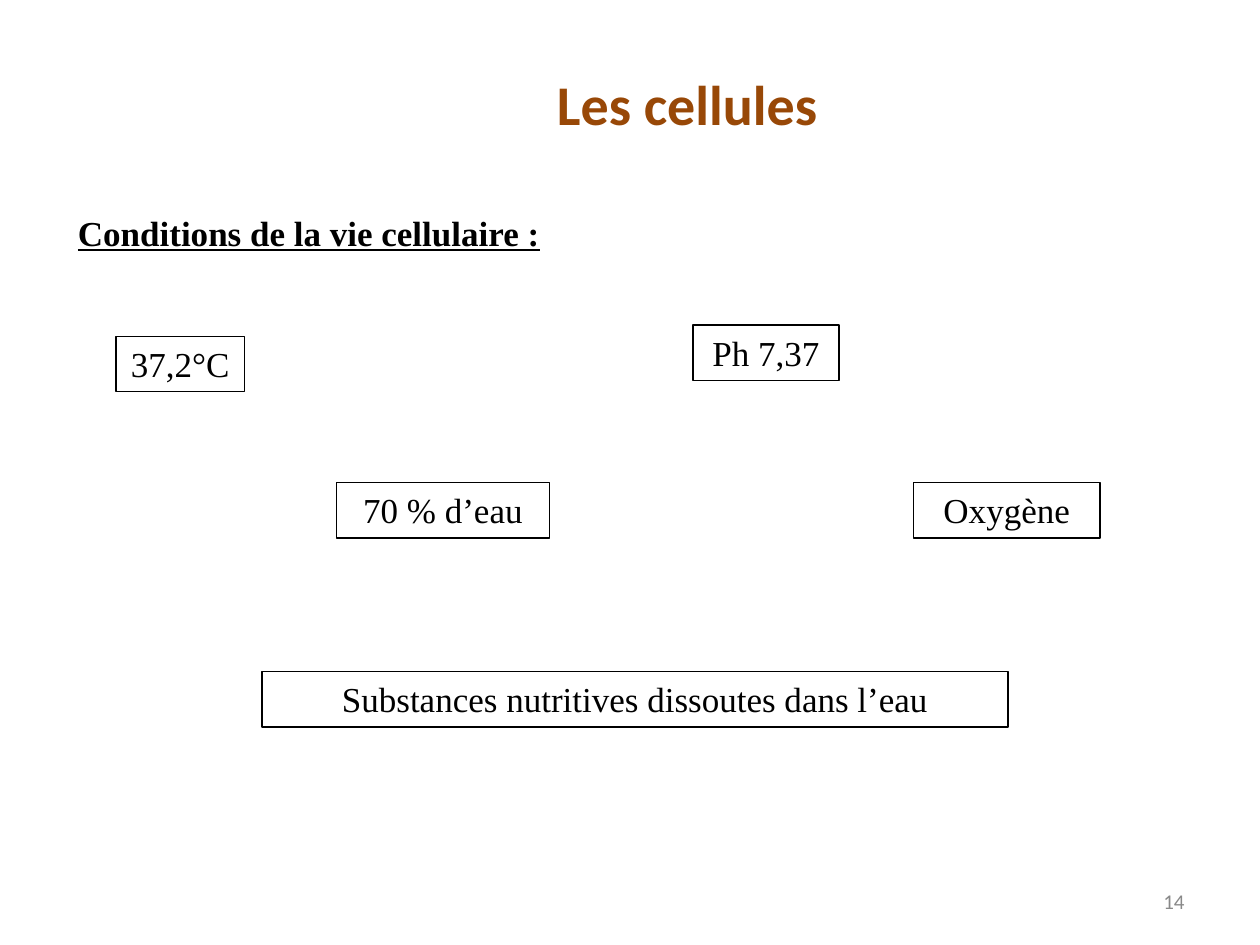
from pptx import Presentation
from pptx.dml.color import RGBColor
from pptx.enum.shapes import MSO_SHAPE
from pptx.enum.text import MSO_ANCHOR, MSO_AUTO_SIZE, PP_ALIGN
from pptx.util import Inches, Pt

BLACK = RGBColor(0x00, 0x00, 0x00)
BROWN = RGBColor(0x98, 0x48, 0x07)
GREY = RGBColor(0x89, 0x89, 0x89)
TITLE_FONT, BODY_FONT = "Calibri", "Times New Roman"

TITLE = "Les cellules"
HEADING = "Conditions de la vie cellulaire :"
PAGE_NUMBER = "14"
BOX_HEIGHT = 0.44
# text, left, top, width (inches)
CONDITIONS = [
    ("37,2°C", 0.92, 2.67, 1.02),
    ("70 % d’eau", 2.67, 3.83, 1.69),
    ("Substances nutritives dissoutes dans l’eau", 2.08, 5.33, 5.92),
    ("Ph 7,37", 5.5, 2.58, 1.16),
    ("Oxygène", 7.25, 3.83, 1.48),
]


def inches(*lengths):
    return [Inches(length) for length in lengths]


def write(shape, text, font_name, size, color, align=PP_ALIGN.LEFT,
          anchor=MSO_ANCHOR.TOP, bold=False, underline=False, wrap=True):
    frame = shape.text_frame
    frame.word_wrap = wrap
    frame.vertical_anchor = anchor
    paragraph = frame.paragraphs[0]
    paragraph.alignment = align
    run = paragraph.add_run()
    run.text = text
    font = run.font
    font.name, font.size, font.bold = font_name, Pt(size), bold
    font.underline = underline
    font.color.rgb = color
    return frame


def add_condition(slide, text, left, top, width):
    box = slide.shapes.add_shape(
        MSO_SHAPE.RECTANGLE, *inches(left, top, width, BOX_HEIGHT))
    box.shadow.inherit = False
    box.fill.background()
    box.line.color.rgb = BLACK
    box.line.width = Pt(0.75)
    frame = write(box, text, BODY_FONT, 20, BLACK, PP_ALIGN.CENTER, wrap=False)
    frame.auto_size = MSO_AUTO_SIZE.NONE


def main():
    deck = Presentation()
    deck.slide_width, deck.slide_height = inches(10, 7.5)
    slide = deck.slides.add_slide(deck.slide_layouts[5])

    title = slide.shapes.title
    title.left, title.top, title.width, title.height = inches(1.22, 0.3, 8.47, 1.03)
    write(title, TITLE, TITLE_FONT, 32, BROWN, PP_ALIGN.CENTER,
          MSO_ANCHOR.MIDDLE, bold=True)

    heading = slide.shapes.add_textbox(*inches(0.52, 1.63, 4, 0.43))
    write(heading, HEADING, BODY_FONT, 20, BLACK, bold=True, underline=True,
          wrap=False)

    for condition in CONDITIONS:
        add_condition(slide, *condition)

    page_number = slide.shapes.add_textbox(*inches(7.17, 6.95, 2.33, 0.4))
    write(page_number, PAGE_NUMBER, TITLE_FONT, 12, GREY, PP_ALIGN.RIGHT,
          MSO_ANCHOR.MIDDLE)

    deck.save("out.pptx")


if __name__ == "__main__":
    main()
